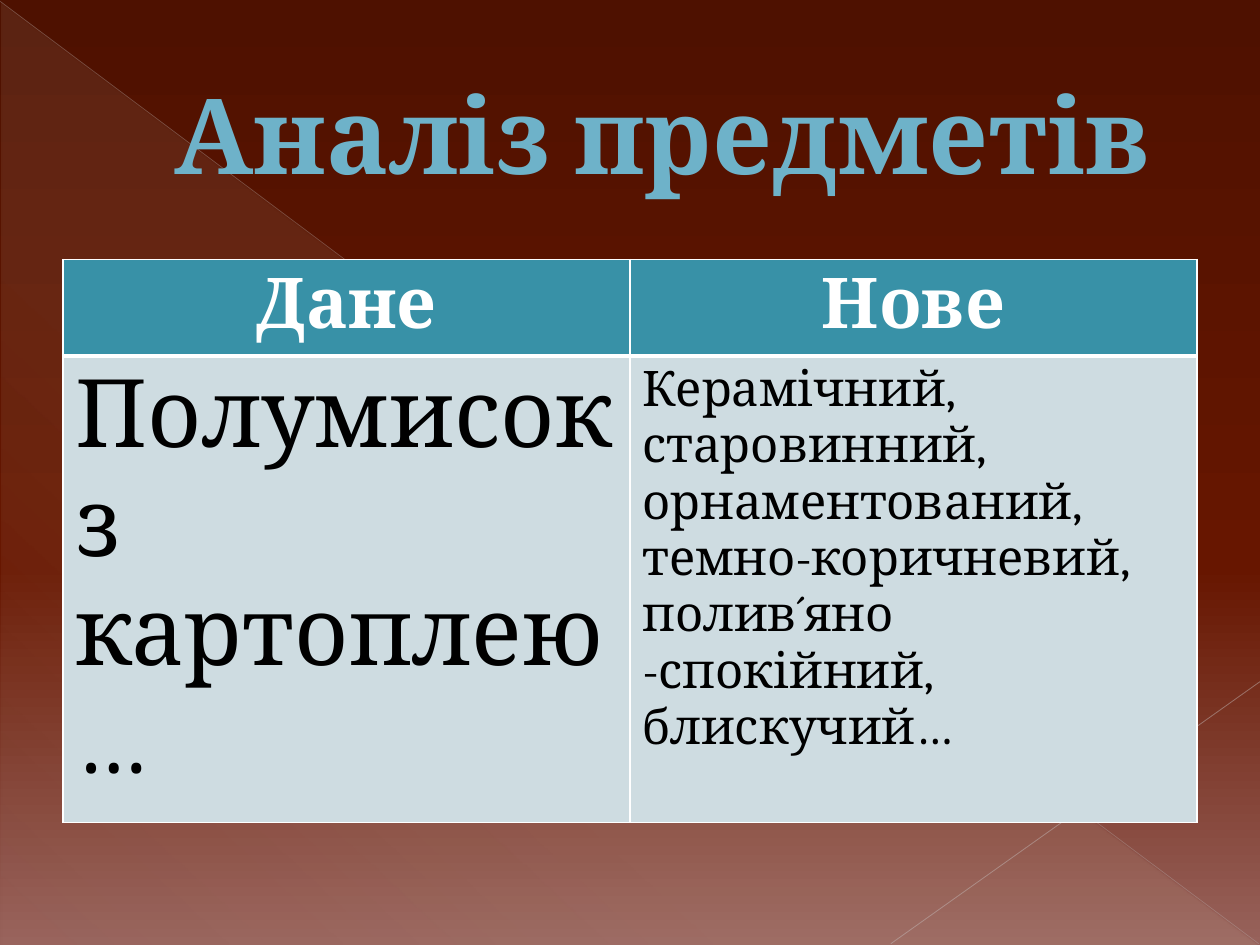
from lxml import etree
from pptx import Presentation
from pptx.dml.color import RGBColor
from pptx.enum.shapes import MSO_CONNECTOR, MSO_SHAPE
from pptx.enum.text import MSO_ANCHOR, PP_ALIGN
from pptx.oxml.ns import qn
from pptx.util import Inches, Pt

CENTER, LEFT = PP_ALIGN.CENTER, PP_ALIGN.LEFT
FONT = "Cambria"
WHITE, BLACK = RGBColor(255, 255, 255), RGBColor(0, 0, 0)
SKY, SKY_EDGE = RGBColor(0x6E, 0xB2, 0xC9), RGBColor(0x27, 0x64, 0x74)
TEAL, PALE = RGBColor(0x38, 0x91, 0xA7), RGBColor(0xCE, 0xDC, 0xE1)
DARK, RUST, ROSE = (RGBColor(0x4E, 0x11, 0), RGBColor(0x67, 0x16, 0),
                    RGBColor(0x97, 0x62, 0x5B))
CREAM = RGBColor(0xE7, 0xDE, 0xC9)
RAY_LONG, RAY_SHORT = RGBColor(0xBD, 0xB3, 0xB2), RGBColor(0xC5, 0xBC, 0xBB)


def add_color(parent, color, alpha=100):
    """Append a colour with its opacity in percent."""
    node = etree.SubElement(parent, qn("a:srgbClr"), val=str(color))
    if alpha < 100:
        etree.SubElement(node, qn("a:alpha"), val=str(alpha * 1000))


def set_gradient(owner, stops, angle):
    """Rewrite the gradient of an element from (percent, colour, opacity)."""
    gradient = owner.find(".//" + qn("a:gradFill"))
    for child in list(gradient):
        gradient.remove(child)
    stop_list = etree.SubElement(gradient, qn("a:gsLst"))
    for position, color, alpha in stops:
        stop = etree.SubElement(stop_list, qn("a:gs"), pos=str(position * 1000))
        add_color(stop, color, alpha)
    etree.SubElement(gradient, qn("a:lin"), ang=str(angle * 60000), scaled="0")


prs = Presentation()
prs.slide_width, prs.slide_height = Inches(10), Inches(7.5)
slide = prs.slides.add_slide(prs.slide_layouts[6])
shapes = slide.shapes

# Background
slide.background.fill.gradient()
set_gradient(slide.background._cSld,
             [(0, DARK, 100), (60, RUST, 100), (100, ROSE, 100)], 90)

# Pale corner triangle
corner = shapes.add_shape(MSO_SHAPE.RIGHT_TRIANGLE, Inches(0.01), Inches(0.02),
                          Inches(9.98), Inches(7.48))
corner.shadow.inherit = False
corner.line.fill.background()
corner.fill.gradient()
set_gradient(corner._element,
             [(0, CREAM, 10), (70, CREAM, 8), (100, CREAM, 1)], 133)

# Diagonal rays
for x1, y1, x2, y2, color, width, alpha in (
    (0, 0.01, 9.99, 7.49, RAY_LONG, 0.39, 35),
    (10, 5.41, 7.07, 7.49, RAY_SHORT, 0.47, 45),
):
    ray = shapes.add_connector(MSO_CONNECTOR.STRAIGHT, Inches(x1), Inches(y1),
                               Inches(x2), Inches(y2))
    ray.line.width = Pt(width)
    ray.line.fill.solid()
    ray_fill = ray.line._ln.find(qn("a:solidFill"))
    for child in list(ray_fill):
        ray_fill.remove(child)
    add_color(ray_fill, color, alpha)
    etree.SubElement(ray._element.spPr, qn("a:effectLst"))

# Title
margin, content_width = Inches(0.5), Inches(9)
title = shapes.add_textbox(margin, Inches(0.29), content_width, Inches(1.53)).text_frame
title.word_wrap = True
title.vertical_anchor = MSO_ANCHOR.MIDDLE
heading = title.paragraphs[0]
heading.text = "Аналіз предметів"
heading.alignment = CENTER
heading._p.get_or_add_pPr().set("marL", str(Inches(0.53)))
heading.font.name, heading.font.size, heading.font.bold = FONT, Pt(60), True
heading.font.color.rgb = SKY
edge = etree.Element(qn("a:ln"), w=str(Pt(0.5)))
add_color(etree.SubElement(edge, qn("a:solidFill")), SKY_EDGE)
heading.font._rPr.insert(0, edge)

# Given / new table: (paragraphs, size) for each cell
rows = [
    [(["Дане"], 40), (["Нове"], 40)],
    [(["Полумисок з картоплею…"], 54),
     (["Керамічний, старовинний, орнаментований, темно-коричневий,",
       "полив´яно -спокійний, блискучий…"], 28)],
]
table = shapes.add_table(2, 2, margin, Inches(2.06), content_width, Inches(4.29)).table
for row, height in zip(table.rows, (0.73, 3.56)):
    row.height = Inches(height)

for r, row in enumerate(rows):
    header = r == 0
    for c, (texts, size) in enumerate(row):
        cell = table.cell(r, c)
        borders = cell._tc.get_or_add_tcPr()
        for side in "LRTB":
            thick = side == ("B" if header else "T")
            border = etree.SubElement(borders, qn("a:ln" + side),
                                      w=str(Pt(3 if thick else 1)))
            add_color(etree.SubElement(border, qn("a:solidFill")), WHITE)
        cell.fill.solid()
        cell.fill.fore_color.rgb = TEAL if header else PALE
        cell.text = "\n".join(texts)
        for paragraph in cell.text_frame.paragraphs:
            paragraph.alignment = CENTER if header else LEFT
            font = paragraph.font
            font.name, font.size, font.bold = FONT, Pt(size), header
            font.color.rgb = WHITE if header else BLACK

prs.save("out.pptx")
